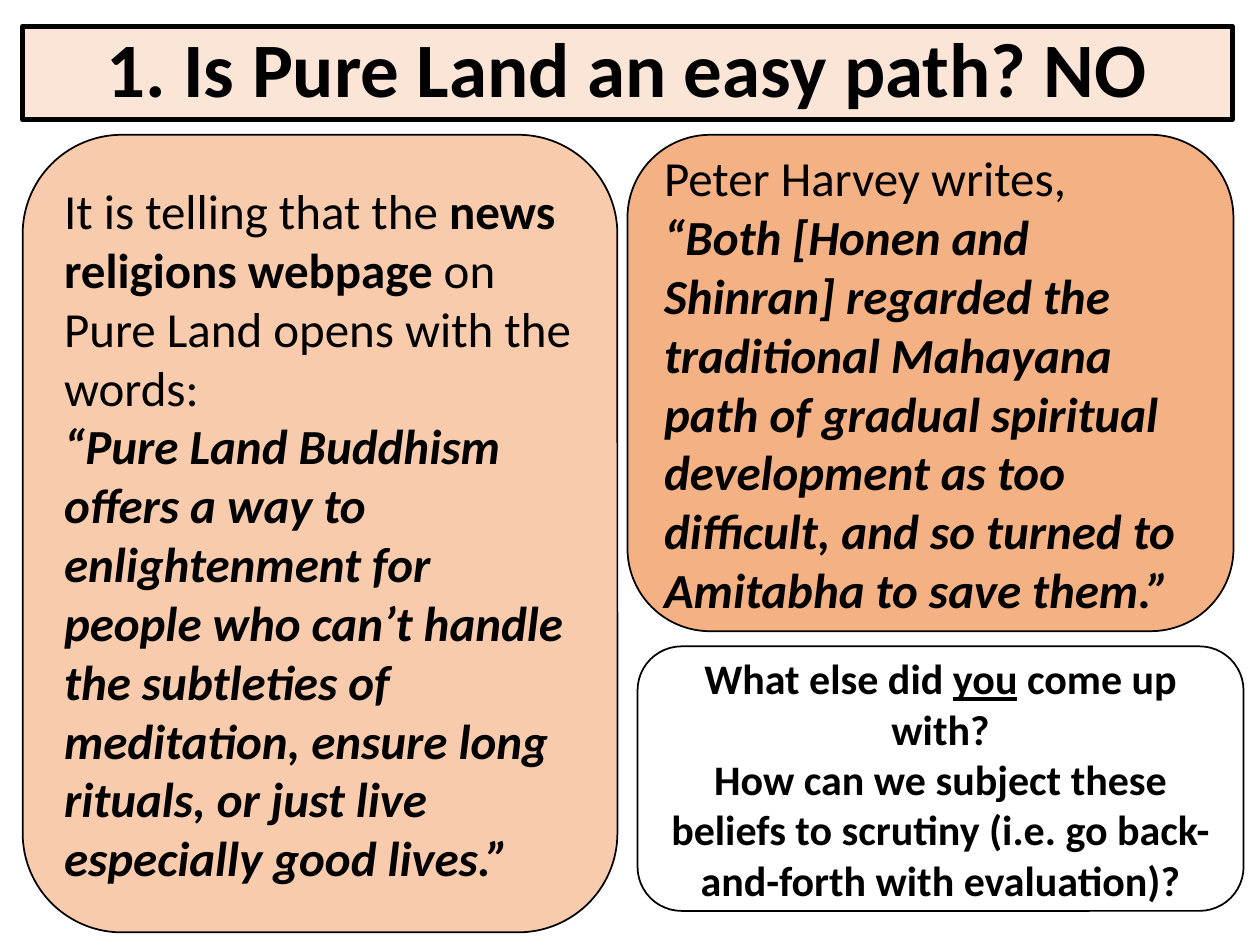
from dataclasses import dataclass

from pptx import Presentation
from pptx.dml.color import RGBColor
from pptx.enum.shapes import MSO_SHAPE
from pptx.enum.text import MSO_ANCHOR, PP_ALIGN
from pptx.util import Inches, Pt

RECTANGLE = MSO_SHAPE.RECTANGLE
ROUNDED = MSO_SHAPE.ROUNDED_RECTANGLE
MIDDLE = MSO_ANCHOR.MIDDLE
LEFT, CENTER = PP_ALIGN.LEFT, PP_ALIGN.CENTER


@dataclass(frozen=True)
class Theme:
    font: str = "Calibri"
    ink: str = "000000"
    title_fill: str = "FBE5D6"
    source_fill: str = "F8CBAD"
    quote_fill: str = "F4B183"
    question_fill: str = "FFFFFF"
    title_size: int = 44
    body_size: int = 28
    question_size: int = 24


@dataclass(frozen=True)
class Span:
    text: str
    bold: bool = False
    italic: bool = False
    underline: bool = False


@dataclass(frozen=True)
class Panel:
    bounds: tuple[float, float, float, float]
    fill: str
    size: int
    paragraphs: list[list[Span]]
    align: PP_ALIGN = LEFT
    preset: MSO_SHAPE = ROUNDED
    border: float = 1
    line_spacing: float = 1.0


THEME = Theme()

PANELS = [
    Panel(
        (0.18, 0.21, 9.6, 0.74), THEME.title_fill, THEME.title_size,
        [[Span("1. Is Pure Land an easy path? NO", bold=True)]],
        align=CENTER, preset=RECTANGLE, border=3, line_spacing=0.9,
    ),
    Panel(
        (0.18, 1.07, 4.72, 6.33), THEME.source_fill, THEME.body_size,
        [
            [
                Span("It is telling that the "),
                Span("news religions webpage", bold=True),
                Span(" on Pure Land opens with the words:"),
            ],
            [Span(
                "“Pure Land Buddhism offers a way to enlightenment for people "
                "who can’t handle the subtleties of meditation, ensure long "
                "rituals, or just live especially good lives.”",
                bold=True, italic=True,
            )],
        ],
    ),
    Panel(
        (4.98, 1.07, 4.81, 3.94), THEME.quote_fill, THEME.body_size,
        [
            [Span("Peter Harvey writes,")],
            [Span(
                "“Both [Honen and Shinran] regarded the traditional Mahayana "
                "path of gradual spiritual development as too difficult, and "
                "so turned to Amitabha to save them.”",
                bold=True, italic=True,
            )],
        ],
    ),
    Panel(
        (5.06, 5.13, 4.81, 2.1), THEME.question_fill, THEME.question_size,
        [
            [
                Span("What else did ", bold=True),
                Span("you", bold=True, underline=True),
                Span(" come up with?", bold=True),
            ],
            [Span(
                "How can we subject these beliefs to scrutiny "
                "(i.e. go back-and-forth with evaluation)?",
                bold=True,
            )],
        ],
        align=CENTER,
    ),
]


def add_span(para, span: Span, size: int) -> None:
    run = para.add_run()
    run.text = span.text
    formats = {
        "name": THEME.font,
        "size": Pt(size),
        "bold": span.bold,
        "italic": span.italic,
        "underline": span.underline,
    }
    for name, value in formats.items():
        setattr(run.font, name, value)
    run.font.color.rgb = RGBColor.from_string(THEME.ink)


def add_panel(page, panel: Panel) -> None:
    box = page.shapes.add_shape(panel.preset, *map(Inches, panel.bounds))
    box.shadow.inherit = False
    box.fill.solid()
    box.fill.fore_color.rgb = RGBColor.from_string(panel.fill)
    box.line.color.rgb = RGBColor.from_string(THEME.ink)
    box.line.width = Pt(panel.border)
    frame = box.text_frame
    frame.word_wrap = True
    frame.vertical_anchor = MIDDLE
    for index, spans in enumerate(panel.paragraphs):
        para = frame.add_paragraph() if index else frame.paragraphs[0]
        para.alignment = panel.align
        para.line_spacing = panel.line_spacing
        for span in spans:
            add_span(para, span, panel.size)


def main() -> None:
    deck = Presentation()
    deck.slide_width, deck.slide_height = Inches(10), Inches(7.5)
    page = deck.slides.add_slide(deck.slide_layouts[6])
    for panel in PANELS:
        add_panel(page, panel)
    deck.save("out.pptx")


if __name__ == "__main__":
    main()
